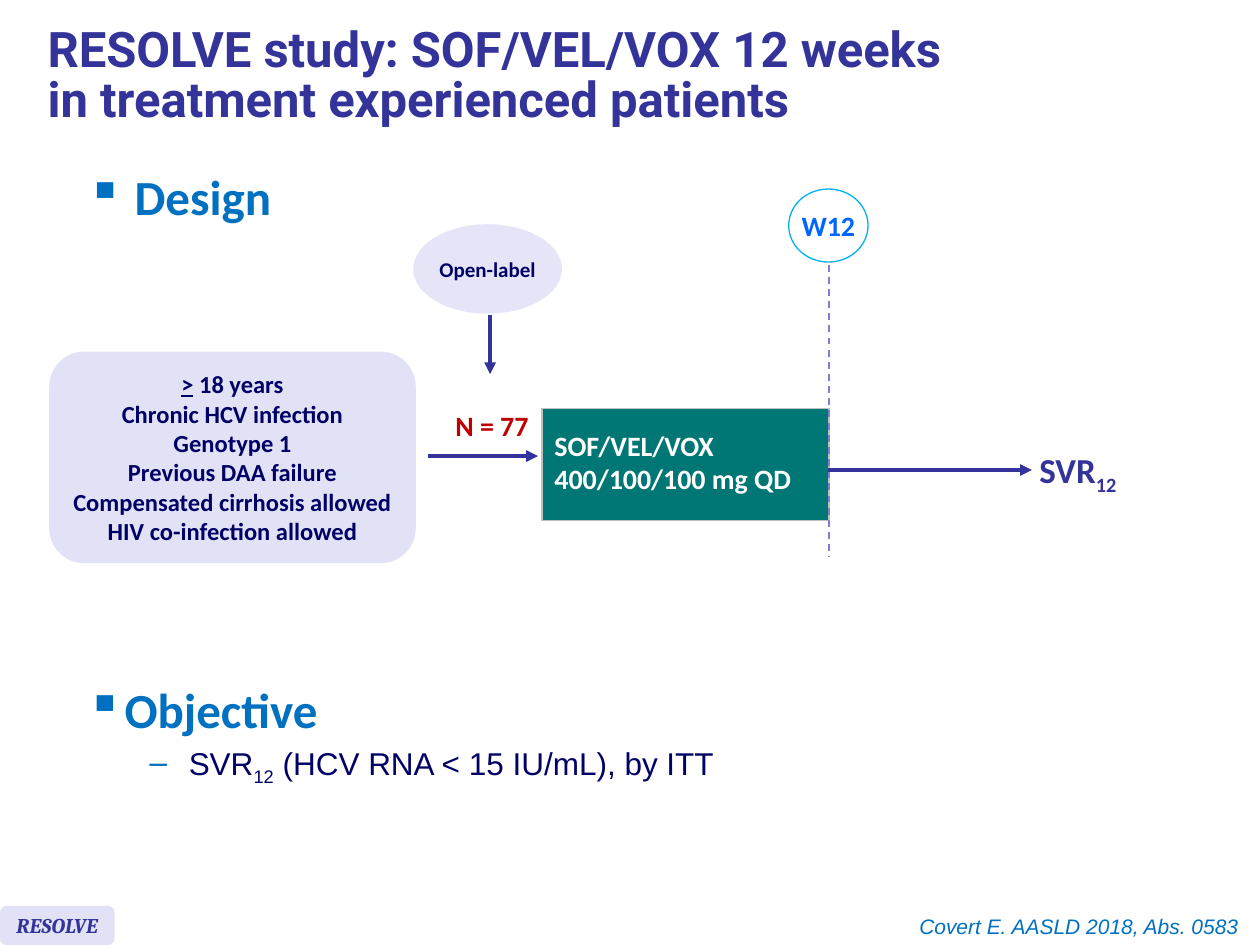
from lxml import etree
from pptx import Presentation
from pptx.dml.color import RGBColor
from pptx.enum.dml import MSO_LINE
from pptx.enum.shapes import MSO_CONNECTOR, MSO_SHAPE
from pptx.enum.text import MSO_ANCHOR as ANCHOR, PP_ALIGN as ALIGN
from pptx.oxml.ns import qn
from pptx.util import Inches, Pt

INDIGO = RGBColor(0x33, 0x33, 0x99)
NAVY = RGBColor(0x00, 0x00, 0x66)
BLUE = RGBColor(0x00, 0x70, 0xC0)
BRIGHT_BLUE = RGBColor(0x00, 0x66, 0xFF)
SKY = RGBColor(0x00, 0xB0, 0xF0)
LAVENDER = RGBColor(0xE2, 0xE2, 0xF6)
PALE_LAVENDER = RGBColor(0xE5, 0xE5, 0xF7)
VIOLET = RGBColor(0x7E, 0x7E, 0xD4)
TEAL = RGBColor(0x00, 0x77, 0x74)
RED = RGBColor(0xC0, 0x00, 0x00)
WHITE = RGBColor(0xFF, 0xFF, 0xFF)


def write(frame, lines, size, color, font="Calibri", bold=True, italic=False,
          align=ALIGN.LEFT, anchor=ANCHOR.TOP, wrap=False):
    """Fill a text frame; a line is a list of (text, run attributes)."""
    frame.word_wrap = wrap
    frame.vertical_anchor = anchor
    for index, line in enumerate(lines):
        paragraph = frame.paragraphs[0] if index == 0 else frame.add_paragraph()
        paragraph.alignment = align
        for text, attributes in [(line, {})] if isinstance(line, str) else line:
            run = paragraph.add_run()
            run.text = text
            for name, value in attributes.items():
                run.font._element.set(name, value)
        paragraph.font.size = Pt(size)
        paragraph.font.name = font
        paragraph.font.bold = bold
        paragraph.font.italic = italic
        paragraph.font.color.rgb = color
    return frame


def add_bullet(paragraph, character, margin, indent):
    """Give a paragraph a blue bullet with a hanging indent."""
    properties = paragraph._p.get_or_add_pPr()
    properties.set("marL", str(Inches(margin)))
    properties.set("indent", str(Inches(-indent)))
    bullet_color = etree.Element(qn("a:buClr"))
    etree.SubElement(bullet_color, qn("a:srgbClr"), val=str(BLUE))
    bullet = etree.Element(qn("a:buChar"), char=character)
    # Bullet elements come before the default run properties
    default_run = properties.find(qn("a:defRPr"))
    default_run.addprevious(bullet_color)
    default_run.addprevious(bullet)


presentation = Presentation()
presentation.slide_width = Inches(10)
presentation.slide_height = Inches(7.5)
slide = presentation.slides.add_slide(presentation.slide_layouts[6])
shapes = slide.shapes
subscript = {"baseline": "-25000"}

# Treatment arm
table = shapes.add_table(1, 1, Inches(4.3), Inches(3.24), Inches(2.28), Inches(0.89)).table
cell = table.cell(0, 0)
cell.fill.solid()
cell.fill.fore_color.rgb = TEAL
cell.vertical_anchor = ANCHOR.MIDDLE
treatment = write(cell.text_frame, ["SOF/VEL/VOX", "400/100/100 mg QD"], 16, WHITE,
                  anchor=ANCHOR.MIDDLE, wrap=True)
for paragraph in treatment.paragraphs:
    paragraph.line_spacing = 0.8
treatment.paragraphs[1].space_before = Pt(3.2)
for position, side in enumerate(("lnL", "lnR", "lnT", "lnB")):
    border = etree.Element(qn(f"a:{side}"), w=str(Pt(1)))
    border_fill = etree.SubElement(border, qn("a:solidFill"))
    etree.SubElement(border_fill, qn("a:srgbClr"), val="C0C0C0")
    cell._tc.get_or_add_tcPr().insert(position, border)

# Week 12 marker and flow arrows
for x1, y1, x2, y2, color, width, is_arrow in (
    (6.58, 2.1, 6.58, 4.42, VIOLET, 1, False),
    (6.57, 3.73, 8.19, 3.73, INDIGO, 2.25, True),
    (3.4, 3.62, 4.27, 3.62, INDIGO, 2.25, True),
    (3.89, 2.5, 3.89, 2.97, INDIGO, 2.25, True),
):
    connector = shapes.add_connector(MSO_CONNECTOR.STRAIGHT, Inches(x1), Inches(y1),
                                     Inches(x2), Inches(y2))
    connector.line.color.rgb = color
    connector.line.width = Pt(width)
    if is_arrow:
        etree.SubElement(connector.line._get_or_add_ln(), qn("a:tailEnd"), type="triangle")
    else:
        connector.line.dash_style = MSO_LINE.DASH
    etree.SubElement(connector._element.spPr, qn("a:effectLst"))

# Labelled shapes: week, population, open-label, study tag
population = [
    [(">", {"u": "sng"}), (" 18 years", {})],
    "Chronic HCV infection",
    "Genotype 1",
    "Previous DAA failure",
    "Compensated cirrhosis allowed",
    "HIV co-infection allowed",
]
for kind, left, top, width, height, fill, outline, lines, size, color, font in (
    (MSO_SHAPE.OVAL, 6.26, 1.5, 0.63, 0.58, WHITE, SKY, ["W12"], 16, BRIGHT_BLUE, "Calibri"),
    (MSO_SHAPE.ROUNDED_RECTANGLE, 0.39, 2.79, 2.91, 1.68, LAVENDER, None,
     population, 14, NAVY, "Calibri"),
    (MSO_SHAPE.OVAL, 3.28, 1.78, 1.18, 0.71, PALE_LAVENDER, None,
     ["Open-label"], 12, NAVY, "Calibri"),
    (MSO_SHAPE.ROUNDED_RECTANGLE, 0, 7.19, 0.91, 0.31, LAVENDER, None,
     ["RESOLVE"], 12, INDIGO, "Cambria"),
):
    shape = shapes.add_shape(kind, Inches(left), Inches(top), Inches(width), Inches(height))
    shape.shadow.inherit = False
    shape.fill.solid()
    shape.fill.fore_color.rgb = fill
    if outline is None:
        shape.line.fill.background()
    else:
        shape.line.color.rgb = outline
        shape.line.width = Pt(0.75)
    write(shape.text_frame, lines, size, color, font, italic=font == "Cambria",
          align=ALIGN.CENTER, anchor=ANCHOR.MIDDLE)

# Patient count and endpoint
count = shapes.add_textbox(Inches(3.51), Inches(3.19), Inches(0.79), Inches(0.37))
write(count.text_frame, ["N = 77"], 16, RED, align=ALIGN.CENTER)
endpoint = shapes.add_textbox(Inches(8.15), Inches(3.51), Inches(0.94), Inches(0.44))
write(endpoint.text_frame, [[("SVR", {}), ("12", subscript)]], 20, INDIGO)

# Section headings and objective
design = shapes.add_textbox(Inches(0.59), Inches(1.27), Inches(1.98), Inches(0.63))
write(design.text_frame, ["Design"], 28, BLUE, wrap=True)
add_bullet(design.text_frame.paragraphs[0], "▪", 0.38, 0.38)

objective = shapes.add_textbox(Inches(0.59), Inches(5.34), Inches(9.37), Inches(1.18))
goal = [("SVR", {}), ("12", subscript), (" (HCV RNA < 15 IU/mL), by ITT", {})]
write(objective.text_frame, ["Objective", goal], 28, BLUE, wrap=True)
heading, detail = objective.text_frame.paragraphs
detail.level = 1
detail.space_before = Pt(3.6)
detail.font.size = Pt(18)
detail.font.name = "Arial"
detail.font.bold = False
detail.font.color.rgb = NAVY
add_bullet(heading, "▪", 0.3, 0.3)
add_bullet(detail, "–", 0.81, 0.31)

# Title
title = shapes.add_textbox(Inches(0.28), Inches(0.08), Inches(9.39), Inches(1.07))
write(title.text_frame,
      ["RESOLVE study: SOF/VEL/VOX 12 weeks", "in treatment experienced patients"],
      28, INDIGO, "Roboto", anchor=ANCHOR.MIDDLE, wrap=True)
for paragraph in title.text_frame.paragraphs:
    paragraph.line_spacing = 0.85

# Citation
citation = shapes.add_textbox(Inches(7.17), Inches(7.2), Inches(2.76), Inches(0.3))
write(citation.text_frame, ["Covert E. AASLD 2018, Abs. 0583"], 12, BLUE, "Arial",
      bold=False, italic=True, align=ALIGN.RIGHT)

presentation.save("out.pptx")
